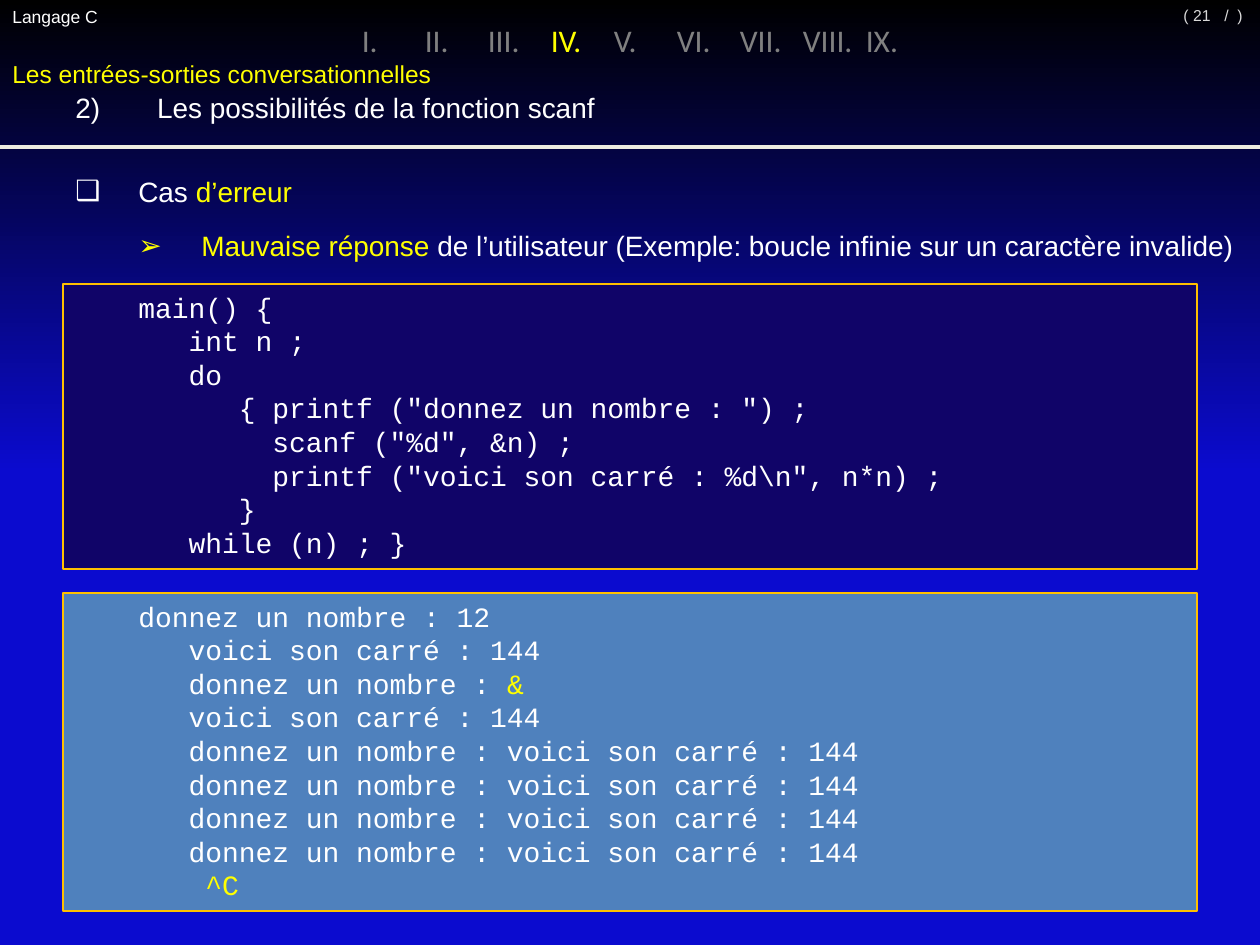
from lxml.etree import SubElement as Sub
from pptx import Presentation
from pptx.dml.color import RGBColor
from pptx.enum.shapes import MSO_CONNECTOR as Link, MSO_SHAPE as Shape
from pptx.enum.text import MSO_ANCHOR as Anchor, MSO_AUTO_SIZE as Fit, PP_ALIGN as Align
from pptx.oxml.ns import qn
from pptx.util import Pt

SCALE = 914400 / 126
WIDTH, HEIGHT = 1260, 945
WHITE, YELLOW, GREY, PALE = "FFFFFF", "FFFF00", "808080", "D9D9D9"

CODE = r'''main() {
   int n ;
   do
      { printf ("donnez un nombre : ") ;
        scanf ("%d", &n) ;
        printf ("voici son carré : %d\n", n*n) ;
      }
   while (n) ; }'''.split("\n")

OUTPUT = [
    "donnez un nombre : 12",
    "   voici son carré : 144",
    "   donnez un nombre : |&",
    "   voici son carré : 144",
    *["   donnez un nombre : voici son carré : 144"] * 4,
    "    |^C",
]


def px(n):
    return round(n * SCALE)


def paint(hue):
    return RGBColor.from_string(hue)


def write(frame, lines, size=16, font="Arial", color=WHITE, align=Align.LEFT,
          anchor=Anchor.TOP, left=0, step=0, hang=0, gap=0, bullets=""):
    frame.word_wrap = True
    frame.vertical_anchor = anchor
    frame.auto_size = Fit.SHAPE_TO_FIT_TEXT if anchor == Anchor.TOP else Fit.NONE
    for i, line in enumerate(lines):
        para = frame.paragraphs[0] if i == 0 else frame.add_paragraph()
        para.alignment = align
        para.space_before = para.space_after = Pt(gap)
        props = para._p.get_or_add_pPr()
        props.set("marL", str(px(left + step * i)))
        props.set("indent", str(px(-hang)))
        if bullets:
            Sub(props, qn("a:buFont"), typeface="Arial")
            Sub(props, qn("a:buChar"), char=bullets[i])
        for j, part in enumerate(line.split("|")):
            if part:
                run = para.add_run()
                run.text = part
                run.font.size = Pt(size)
                run.font.name = font
                run.font.color.rgb = paint(YELLOW if j % 2 else color)


def label(slide, box, lines, **form):
    write(slide.shapes.add_textbox(*map(px, box)).text_frame, lines, **form)


def backdrop(slide):
    fill = slide.background.fill
    fill.gradient()
    fill.gradient_angle = 270
    for stop, hue, spot in zip(fill.gradient_stops, ("000000", "0B0BCF"), (0, 0.5)):
        stop.color.rgb = paint(hue)
        stop.position = spot


def header(slide, x, y, w, h):
    label(slide, (x, y, 116, 34), ["Langage C"], size=10)
    page = dict(size=9, color=PALE, anchor=Anchor.MIDDLE)
    label(slide, (x + w - 66, y - 10, 79, 50), ["/  )"], align=Align.CENTER, **page)
    label(slide, (x + w - 105, y - 10, 68, 50), ["( 21"], align=Align.RIGHT, **page)
    label(slide, (x, y + 15, w, 50),
          ["I.\tII.\tIII.\t|IV.|\tV.\tVI.\tVII.\tVIII.\tIX."],
          size=18, font="Calibri", color=GREY, align=Align.CENTER)
    label(slide, (x, y + 53, w, 43), ["|Les entrées-sorties conversationnelles"],
          size=14, left=74, hang=74, gap=6)
    label(slide, (x, y + 84, 640, 47), ["2)\t Les possibilités de la fonction scanf"],
          left=137, hang=74, gap=6)
    ends = map(px, (x, y + h, x + w, y + h))
    rule = slide.shapes.add_connector(Link.STRAIGHT, *ends)
    rule.line.color.rgb = paint("EEECE1")
    rule.line.width = Pt(2)
    Sub(rule._element.spPr, qn("a:effectLst"))


def points(slide, *box):
    lines = ["Cas |d’erreur",
             "|Mauvaise réponse |de l’utilisateur "
             "(Exemple: boucle infinie sur un caractère invalide)"]
    label(slide, box, lines, left=126, step=63, hang=63, gap=6, bullets="❑➢")


def panel(slide, box, lines, hue):
    rect = slide.shapes.add_shape(Shape.RECTANGLE, *map(px, box))
    rect.shadow.inherit = False
    rect.fill.solid()
    rect.fill.fore_color.rgb = paint(hue)
    rect.line.color.rgb = paint("FFC000")
    rect.line.width = Pt(0.75)
    write(rect.text_frame, lines, font="Courier New", left=126, hang=63)


def main():
    deck = Presentation()
    deck.slide_width, deck.slide_height = px(WIDTH), px(HEIGHT)
    slide = deck.slides.add_slide(deck.slide_layouts[6])
    backdrop(slide)
    header(slide, 0, 0, WIDTH, 147)
    points(slide, 0, 168, WIDTH, 102)
    panel(slide, (63, 593, 1134, 318), OUTPUT, "4F81BD")
    panel(slide, (63, 284, 1134, 285), CODE, "100468")
    deck.save("out.pptx")


if __name__ == "__main__":
    main()
